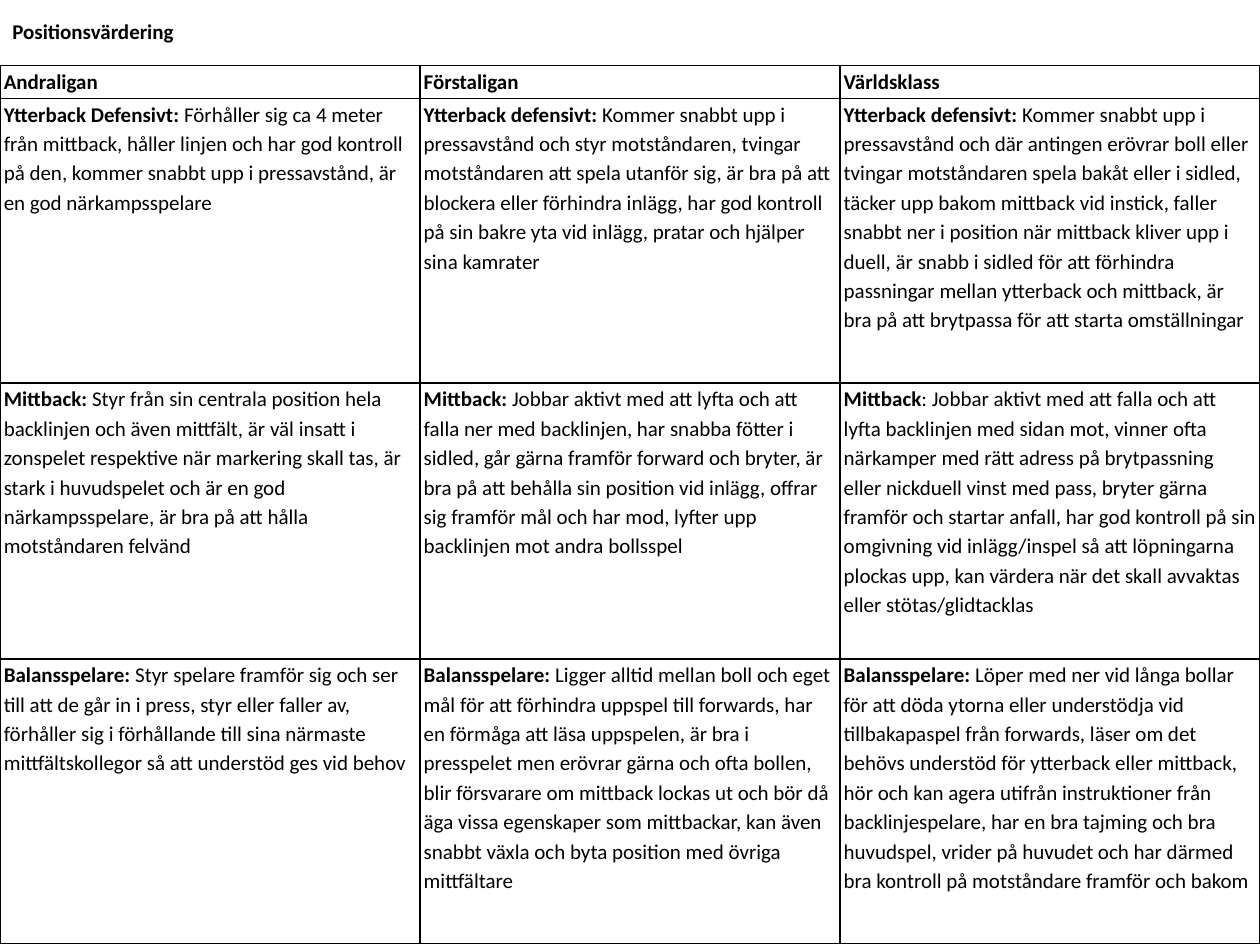
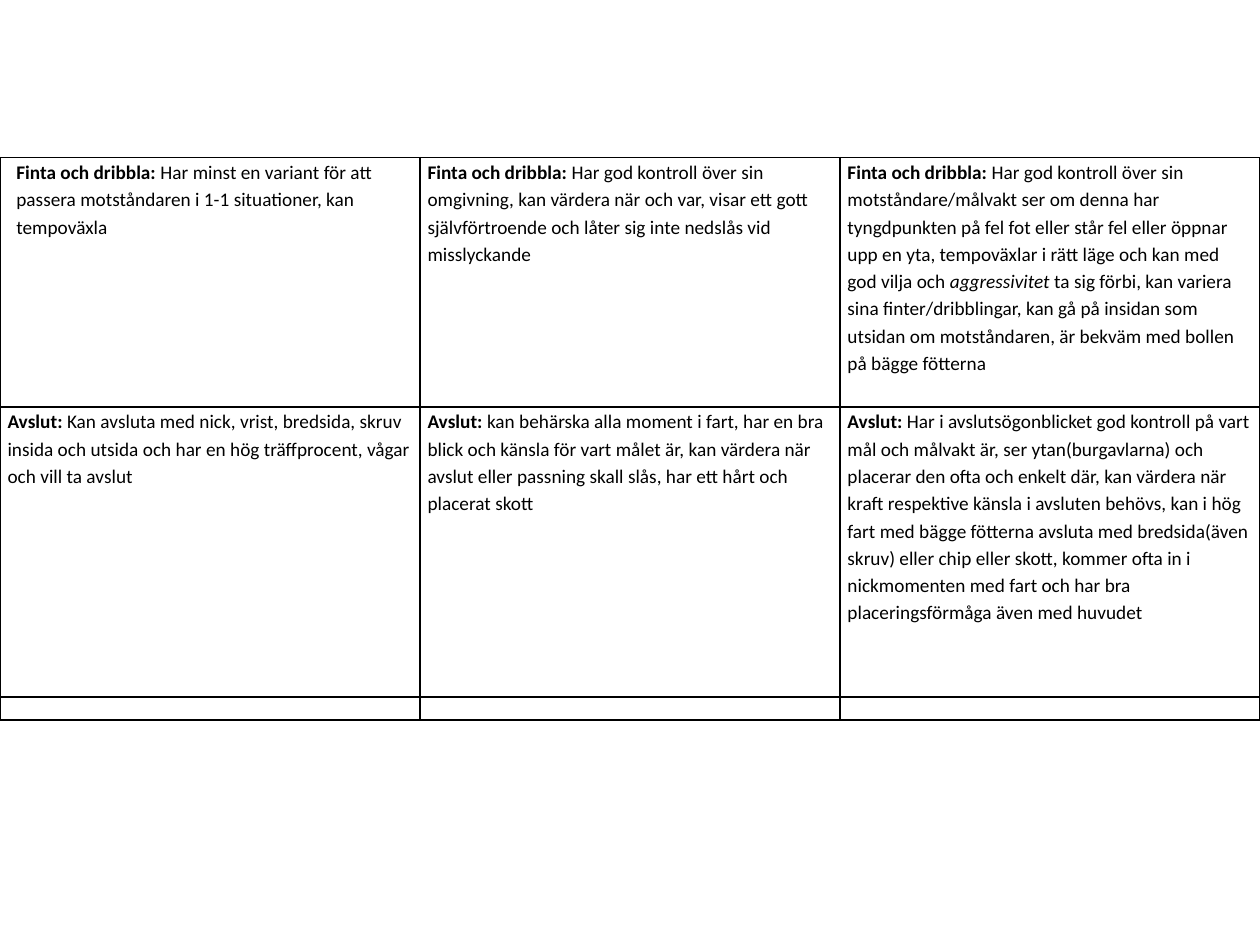
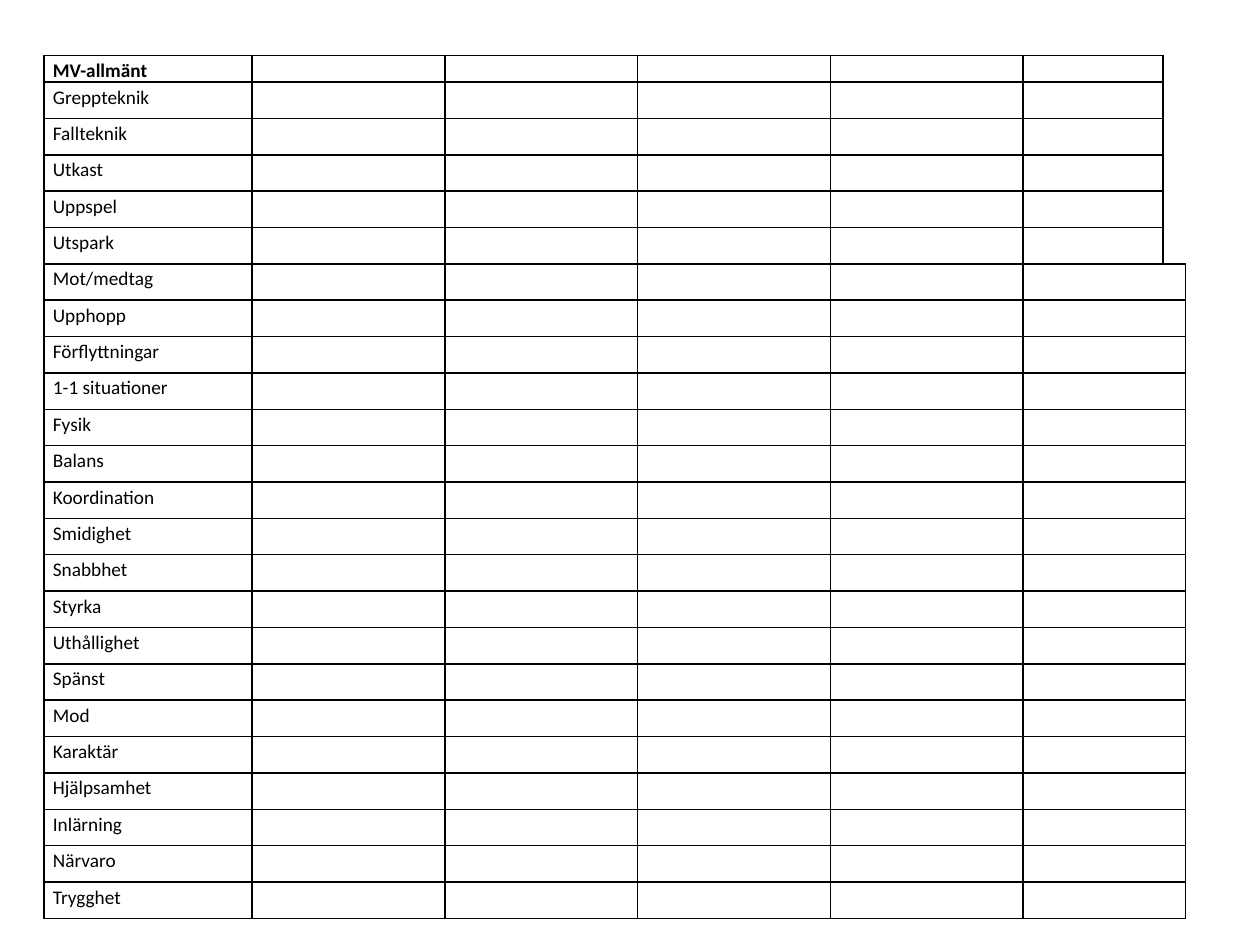
from lxml import etree
from pptx import Presentation
from pptx.dml.color import RGBColor
from pptx.enum.text import MSO_ANCHOR
from pptx.oxml.ns import qn
from pptx.util import Inches, Pt

MIDDLE = MSO_ANCHOR.MIDDLE
COLORS = {"ink": "000000"}
FONT = "Calibri"
LINE_SPACING = 1.15
BORDER_WIDTH = Pt(1)
SIDES = {"left": "a:lnL", "right": "a:lnR", "top": "a:lnT", "bottom": "a:lnB"}
THIRDS = [10 / 3] * 3

# Each cell is (bold heading, body); underscores enclose italic words
POSITIONS = [
    [("Andraligan", ""), ("Förstaligan", ""), ("Världsklass", "")],
    [
        ("Ytterback Defensivt:",
         " Förhåller sig ca 4 meter från mittback, håller linjen och har god kontroll "
         "på den, kommer snabbt upp i pressavstånd, är en god närkampsspelare"),
        ("Ytterback defensivt:",
         " Kommer snabbt upp i pressavstånd och styr motståndaren, tvingar motståndaren "
         "att spela utanför sig, är bra på att blockera eller förhindra inlägg, har god "
         "kontroll på sin bakre yta vid inlägg, pratar och hjälper sina kamrater"),
        ("Ytterback defensivt:",
         " Kommer snabbt upp i pressavstånd och där antingen erövrar boll eller tvingar "
         "motståndaren spela bakåt eller i sidled, täcker upp bakom mittback vid instick, "
         "faller snabbt ner i position när mittback kliver upp i duell, är snabb i sidled "
         "för att förhindra passningar mellan ytterback och mittback, är bra på att "
         "brytpassa för att starta omställningar"),
    ],
    [
        ("Mittback:",
         " Styr från sin centrala position hela backlinjen och även mittfält, är väl "
         "insatt i zonspelet respektive när markering skall tas, är stark i huvudspelet "
         "och är en god närkampsspelare, är bra på att hålla motståndaren felvänd"),
        ("Mittback:",
         " Jobbar aktivt med att lyfta och att falla ner med backlinjen, har snabba "
         "fötter i sidled, går gärna framför forward och bryter, är bra på att behålla "
         "sin position vid inlägg, offrar sig framför mål och har mod, lyfter upp "
         "backlinjen mot andra bollsspel"),
        ("Mittback",
         ": Jobbar aktivt med att falla och att lyfta backlinjen med sidan mot, vinner "
         "ofta närkamper med rätt adress på brytpassning eller nickduell vinst med pass, "
         "bryter gärna framför och startar anfall, har god kontroll på sin omgivning vid "
         "inlägg/inspel så att löpningarna plockas upp, kan värdera när det skall "
         "avvaktas eller stötas/glidtacklas"),
    ],
    [
        ("Balansspelare:",
         " Styr spelare framför sig och ser till att de går in i press, styr eller faller "
         "av, förhåller sig i förhållande till sina närmaste mittfältskollegor så att "
         "understöd ges vid behov"),
        ("Balansspelare:",
         " Ligger alltid mellan boll och eget mål för att förhindra uppspel till forwards, "
         "har en förmåga att läsa uppspelen, är bra i presspelet men erövrar gärna och "
         "ofta bollen, blir försvarare om mittback lockas ut och bör då äga vissa "
         "egenskaper som mittbackar, kan även snabbt växla och byta position med övriga "
         "mittfältare"),
        ("Balansspelare:",
         " Löper med ner vid långa bollar för att döda ytorna eller understödja vid "
         "tillbakapaspel från forwards, läser om det behövs understöd för ytterback eller "
         "mittback, hör och kan agera utifrån instruktioner från backlinjespelare, har en "
         "bra tajming och bra huvudspel, vrider på huvudet och har därmed bra kontroll på "
         "motståndare framför och bakom"),
    ],
]

ATTACK_SKILLS = [
    [
        ("Finta och dribbla:",
         " Har minst en variant för att passera motståndaren i 1-1 situationer, kan "
         "tempoväxla"),
        ("Finta och dribbla:",
         " Har god kontroll över sin omgivning, kan värdera när och var, visar ett gott "
         "självförtroende och låter sig inte nedslås vid misslyckande"),
        ("Finta och dribbla:",
         " Har god kontroll över sin motståndare/målvakt ser om denna har tyngdpunkten på "
         "fel fot eller står fel eller öppnar upp en yta, tempoväxlar i rätt läge och kan "
         "med god vilja och _aggressivitet _ta sig förbi, kan variera sina "
         "finter/dribblingar, kan gå på insidan som utsidan om motståndaren, är bekväm "
         "med bollen på bägge fötterna"),
    ],
    [
        ("Avslut:",
         " Kan avsluta med nick, vrist, bredsida, skruv insida och utsida och har en hög "
         "träffprocent, vågar och vill ta avslut"),
        ("Avslut:",
         " kan behärska alla moment i fart, har en bra blick och känsla för vart målet är, "
         "kan värdera när avslut eller passning skall slås, har ett hårt och placerat "
         "skott"),
        ("Avslut:",
         " Har i avslutsögonblicket god kontroll på vart mål och målvakt är, ser "
         "ytan(burgavlarna) och placerar den ofta och enkelt där, kan värdera när kraft "
         "respektive känsla i avsluten behövs, kan i hög fart med bägge fötterna avsluta "
         "med bredsida(även skruv) eller chip eller skott, kommer ofta in i nickmomenten "
         "med fart och har bra placeringsförmåga även med huvudet"),
    ],
    [("", "")] * 3,
]

KEEPER_SKILLS = [
    "Greppteknik", "Fallteknik", "Utkast", "Uppspel", "Utspark", "Mot/medtag",
    "Upphopp", "Förflyttningar", "1-1 situationer", "Fysik", "Balans",
    "Koordination", "Smidighet", "Snabbhet", "Styrka", "Uthållighet", "Spänst",
    "Mod", "Karaktär", "Hjälpsamhet", "Inlärning", "Närvaro", "Trygghet",
]
KEEPER_COLUMNS = [1.65] + [1.53] * 4 + [1.11, 0.1]
NARROW_ROWS = 6  # rows that leave the last thin column open


def add_text(paragraph, text, *, size, bold=False, italic=False):
    run = paragraph.add_run()
    run.text = text
    run.font.name = FONT
    run.font.size = Pt(size)
    run.font.bold = bold
    run.font.italic = italic
    run.font.color.rgb = RGBColor.from_string(COLORS["ink"])


def write_cell(cell, heading, body, *, size, inset):
    cell.margin_left = cell.margin_right = Inches(inset)
    cell.margin_top = cell.margin_bottom = 0
    paragraph = cell.text_frame.paragraphs[0]
    if not heading and not body:
        # An empty line keeps the text size so that its row stays low
        end = etree.SubElement(paragraph._p, qn("a:endParaRPr"))
        end.set("sz", str(size * 100))
        return
    paragraph.line_spacing = LINE_SPACING
    if heading:
        add_text(paragraph, heading, size=size, bold=True)
    for index, part in enumerate(body.split("_")):
        if part:
            add_text(paragraph, part, size=size, italic=index % 2 == 1)


def set_borders(cell, visible=tuple(SIDES)):
    properties = cell._tc.get_or_add_tcPr()
    for child in list(properties):
        properties.remove(child)
    for side, tag in SIDES.items():
        line = etree.SubElement(properties, qn(tag), w=str(BORDER_WIDTH))
        if side in visible:
            fill = etree.SubElement(line, qn("a:solidFill"))
            etree.SubElement(fill, qn("a:srgbClr"), val=COLORS["ink"])
        else:
            etree.SubElement(line, qn("a:noFill"))
    cell.fill.background()


def add_grid(slide, rows, *, left, top, widths, heights, size, inset):
    frame = slide.shapes.add_table(
        len(rows), len(widths), Inches(left), Inches(top),
        Inches(sum(widths)), Inches(sum(heights)))
    table = frame.table
    table.first_row = table.horz_banding = False
    for column, width in zip(table.columns, widths):
        column.width = Inches(width)
    for row, height, contents in zip(table.rows, heights, rows):
        row.height = Inches(height)
        for cell, (heading, body) in zip(row.cells, contents):
            write_cell(cell, heading, body, size=size, inset=inset)
            set_borders(cell)
    return table


def add_title(slide, text):
    box = slide.shapes.add_textbox(0, 0, Inches(10), Inches(0.5))
    box.text_frame.word_wrap = True
    box.text_frame.vertical_anchor = MIDDLE
    add_text(box.text_frame.paragraphs[0], text, size=12, bold=True)


def build_positions(slide):
    add_grid(slide, POSITIONS, left=0, top=0.52, widths=THIRDS,
             heights=[0.26, 2.26, 2.19, 2.26], size=12, inset=0.03)
    add_title(slide, "Positionsvärdering")


def build_attack_skills(slide):
    table = add_grid(slide, ATTACK_SKILLS, left=0, top=1.25, widths=THIRDS,
                     heights=[1.98, 2.3, 0.18], size=11, inset=0.06)
    first = table.cell(0, 0).text_frame.paragraphs[0]
    first.space_after = Pt(10)
    first._p.get_or_add_pPr().set("marL", str(Inches(0.07)))


def build_keeper_skills(slide):
    blanks = [("", "")] * (len(KEEPER_COLUMNS) - 1)
    rows = [[("MV-allmänt", "")] + blanks]
    rows += [[("", skill)] + blanks for skill in KEEPER_SKILLS]
    header_height = 0.21
    row_height = (6.85 - header_height) / len(KEEPER_SKILLS)
    table = add_grid(slide, rows, left=0.35, top=0.44, widths=KEEPER_COLUMNS,
                     heights=[header_height] + [row_height] * len(KEEPER_SKILLS),
                     size=11, inset=0.07)
    # The thin last column is open at the top and joined to its neighbour below
    last = len(KEEPER_COLUMNS) - 1
    for index in range(len(rows)):
        thin_cell = table.cell(index, last)
        if index < NARROW_ROWS:
            closed = index == NARROW_ROWS - 1
            set_borders(thin_cell, ("left", "bottom") if closed else ("left",))
        else:
            table.cell(index, last - 1).merge(thin_cell)


def main():
    presentation = Presentation()
    presentation.slide_width = Inches(10)
    presentation.slide_height = Inches(7.5)
    blank_layout = presentation.slide_layouts[6]
    for build in (build_positions, build_attack_skills, build_keeper_skills):
        build(presentation.slides.add_slide(blank_layout))
    presentation.save("out.pptx")


if __name__ == "__main__":
    main()
